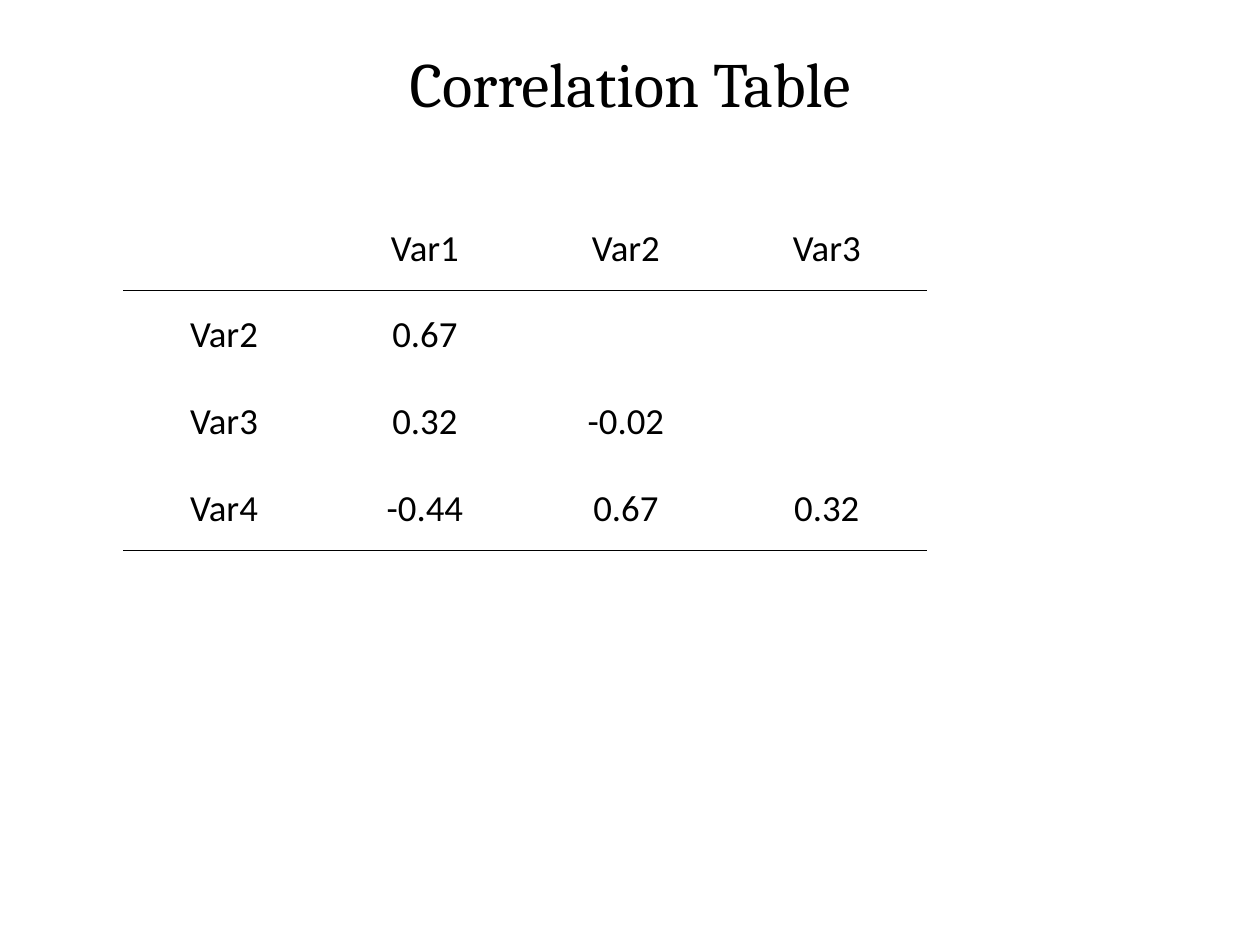
"""Build a slide with a lower-triangle correlation table."""
from lxml import etree
from pptx import Presentation, util as u
from pptx.dml.color import RGBColor
from pptx.enum import text
from pptx.oxml import ns

INK = {"text": "000000", "rule": "000000", "back": "FFFFFF"}
ROWS = [
    ["", "Var1", "Var2", "Var3"],
    ["Var2", "0.67", "", ""],
    ["Var3", "0.32", "-0.02", ""],
    ["Var4", "-0.44", "0.67", "0.32"],
]
RULES = {(0, "lnB"), (1, "lnT"), (3, "lnB")}


def style(para, font, size):
    para.alignment = text.PP_ALIGN.CENTER
    para.font.name = font
    para.font.size = u.Pt(size)
    para.font.color.rgb = RGBColor.from_string(INK["text"])


def edge(cell, side, pos, ruled):
    line = etree.Element(ns.qn(f"a:{side}"), w=str(u.Pt(0.5)))
    if ruled:
        fill = etree.SubElement(line, ns.qn("a:solidFill"))
        etree.SubElement(fill, ns.qn("a:srgbClr"), val=INK["rule"])
    else:
        etree.SubElement(line, ns.qn("a:noFill"))
    cell._tc.get_or_add_tcPr().insert(pos, line)


deck = Presentation()
deck.slide_width, deck.slide_height = u.Inches(10), u.Inches(7.5)
slide = deck.slides.add_slide(deck.slide_layouts[6])

grid = slide.shapes.add_table(
    4, 4, u.Inches(0.98), u.Inches(1.62), u.Inches(6.38), u.Inches(2.75)
).table
grid.first_row = grid.horz_banding = False

for r, row in enumerate(ROWS):
    for c, label in enumerate(row):
        cell = grid.cell(r, c)
        cell.fill.solid()
        cell.fill.fore_color.rgb = RGBColor.from_string(INK["back"])
        cell.vertical_anchor = text.MSO_ANCHOR.MIDDLE
        cell.margin_left = cell.margin_right = cell.margin_top = u.Inches(0.02)
        cell.margin_bottom = 0
        cell.text = label
        style(cell.text_frame.paragraphs[0], "Calibri", 21)
        for pos, side in enumerate(["lnL", "lnR", "lnT", "lnB"]):
            edge(cell, side, pos, (r, side) in RULES)

title = slide.shapes.add_textbox(
    u.Inches(0.5), u.Inches(0.3), u.Inches(9), u.Inches(1.25)
).text_frame
title.word_wrap = True
title.text = "Correlation Table"
style(title.paragraphs[0], "Cambria", 36)

deck.save("out.pptx")
